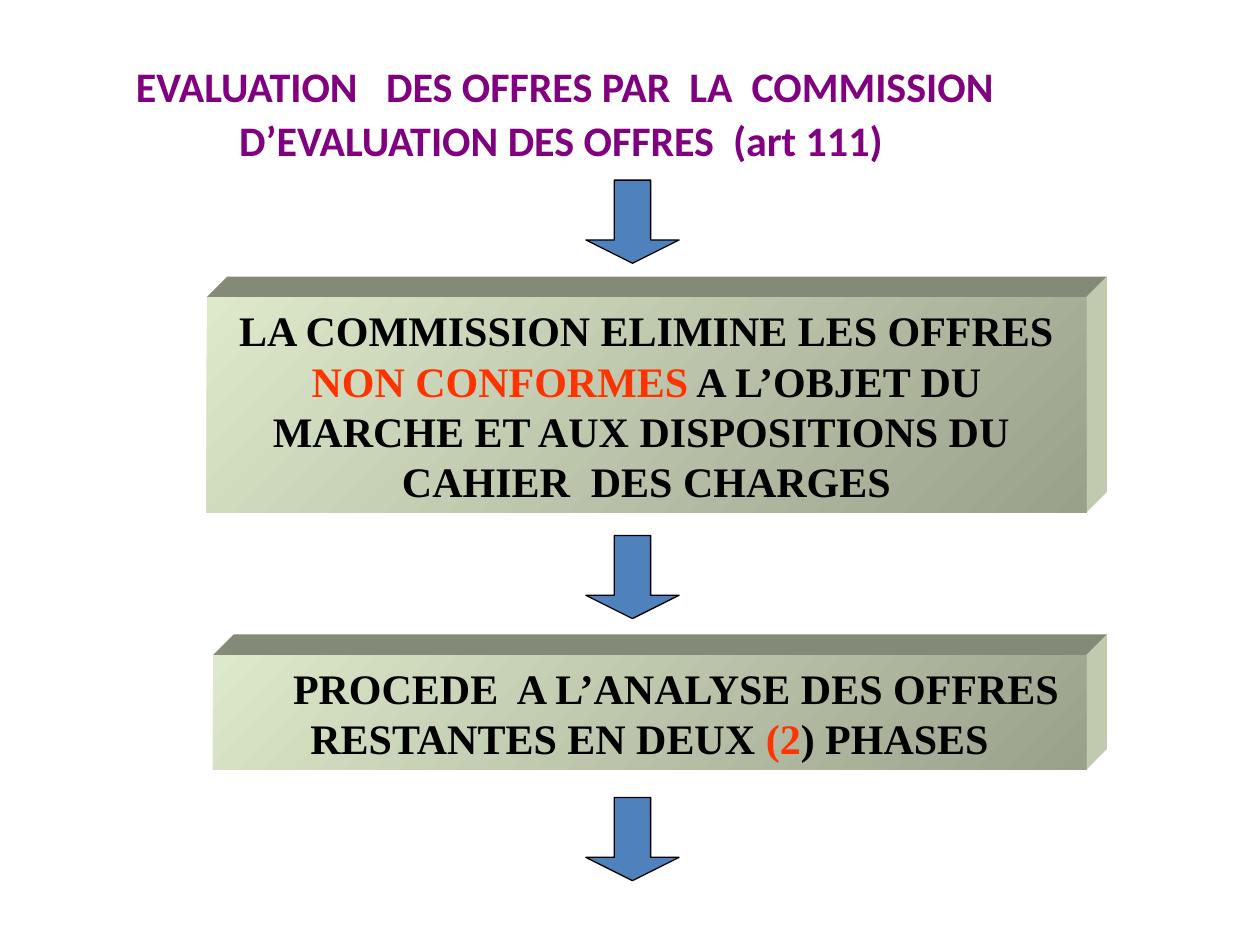
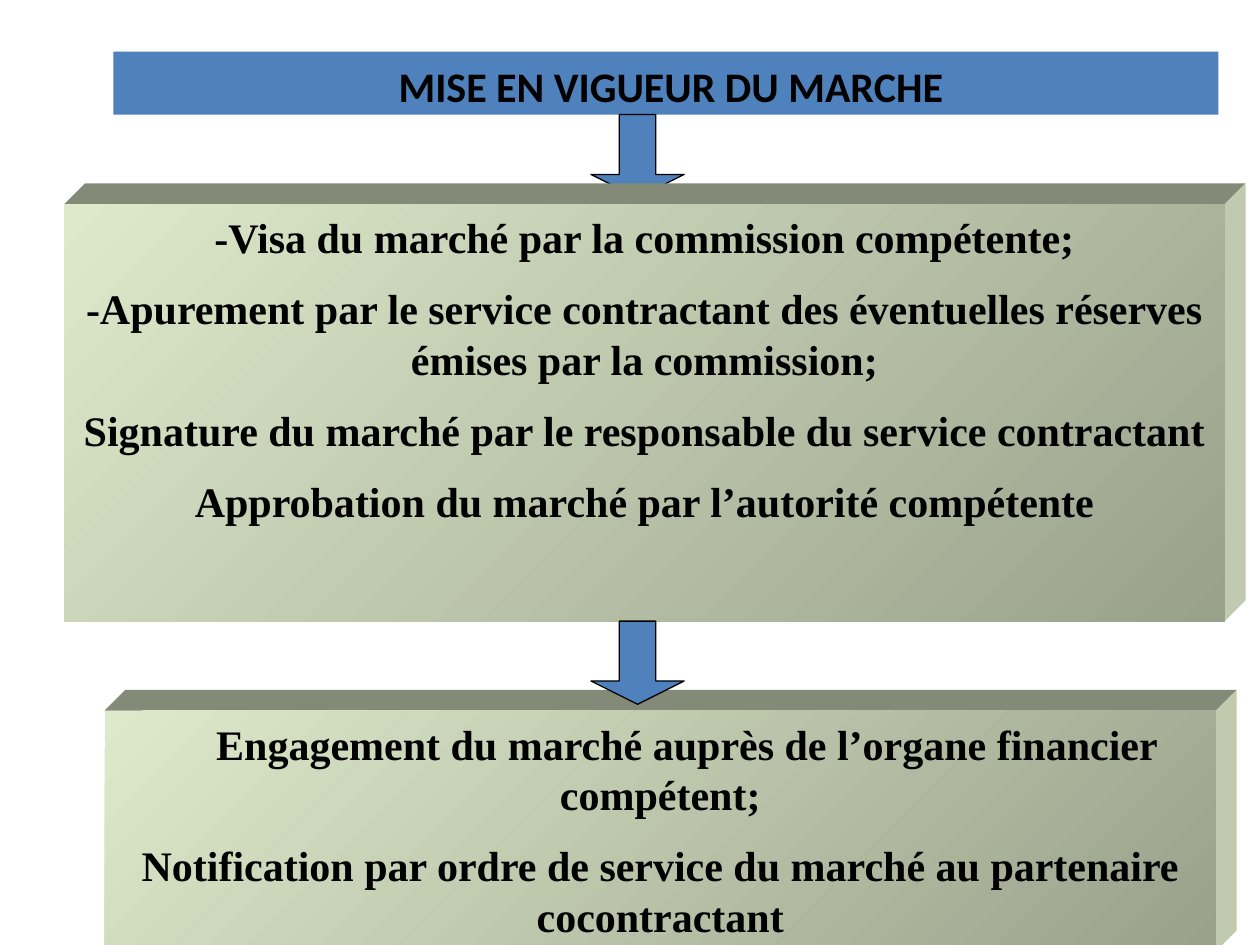
from typing import NamedTuple

from pptx import Presentation
from pptx.dml.color import RGBColor
from pptx.enum.shapes import MSO_SHAPE as Preset
from pptx.enum.text import MSO_ANCHOR as Anchor, PP_ALIGN as Align
from pptx.util import Inches, Pt

BLACK = RGBColor(0x00, 0x00, 0x00)
BLUE = RGBColor(0x4F, 0x81, 0xBD)
PURPLE = RGBColor(0x80, 0x00, 0x80)
RED = RGBColor(0xFF, 0x33, 0x00)
LIGHT = RGBColor(0xDE, 0xE8, 0xCA)
DARK = RGBColor(0x99, 0xA1, 0x8B)
ROOF = RGBColor(0x83, 0x8A, 0x78)
SIDE = RGBColor(0xC1, 0xC9, 0xAF)
DEPTH = 0.165
SERIF = "Times New Roman"
SANS = "Calibri"


class Run(NamedTuple):
    text: str
    color: RGBColor = BLACK


class Para(NamedTuple):
    runs: list[Run]
    indent: float = 0


class Arrow(NamedTuple):
    left: float
    top: float


class Block(NamedTuple):
    left: float
    top: float
    width: float
    height: float
    paras: list[Para]


class Title(NamedTuple):
    height: float
    paras: list[Para]
    band: bool = False


def write(frame, paras: list[Para], font: str, align, gap: float, inset: float):
    frame.word_wrap = True
    frame.vertical_anchor = Anchor.TOP
    frame.margin_top = Inches(inset)
    for i, item in enumerate(paras):
        para = frame.add_paragraph() if i else frame.paragraphs[0]
        para.alignment = align
        if i:
            para.space_before = Pt(gap)
        if item.indent:
            para._p.get_or_add_pPr().set("indent", str(Inches(item.indent)))
        para.font.name = font
        para.font.size = Pt(24)
        para.font.bold = True
        for part in item.runs:
            run = para.add_run()
            run.text = part.text
            run.font.color.rgb = part.color


def paint(shape, color: RGBColor):
    shape.shadow.inherit = False
    shape.fill.solid()
    shape.fill.fore_color.rgb = color
    shape.line.fill.background()


def draw_title(slide, title: Title):
    spot = [Inches(n) for n in (0.9, 0.41, 8.77, title.height)]
    if title.band:
        shape = slide.shapes.add_shape(Preset.RECTANGLE, *spot)
        paint(shape, BLUE)
    else:
        shape = slide.shapes.add_textbox(*spot)
    align = Align.CENTER if title.band else Align.LEFT
    write(shape.text_frame, title.paras, SANS, align, 2, 0.07)


def draw_arrow(slide, arrow: Arrow):
    shape = slide.shapes.add_shape(
        Preset.DOWN_ARROW, Inches(arrow.left), Inches(arrow.top), Inches(0.74), Inches(0.66)
    )
    paint(shape, BLUE)
    shape.adjustments[0] = 0.39
    shape.adjustments[1] = 0.28
    shape.line.color.rgb = BLACK
    shape.line.width = Pt(0.75)


def draw_face(slide, points: list[tuple[float, float]], color: RGBColor):
    spots = [(Inches(x), Inches(y)) for x, y in points]
    pen = slide.shapes.build_freeform(*spots[0])
    pen.add_line_segments(spots[1:], close=True)
    paint(pen.convert_to_shape(), color)


def draw_block(slide, block: Block):
    left, top, width, height, paras = block
    right, base = left + width, top + height
    peak, edge = top - DEPTH, right + DEPTH
    draw_face(slide, [(left, top), (left + DEPTH, peak), (edge, peak), (right, top)], ROOF)
    draw_face(slide, [(right, top), (edge, peak), (edge, base - DEPTH), (right, base)], SIDE)
    shape = slide.shapes.add_shape(
        Preset.RECTANGLE, Inches(left), Inches(top), Inches(width), Inches(height)
    )
    paint(shape, LIGHT)
    shape.fill.gradient()
    shape.fill.gradient_angle = 315
    for stop, color in zip(shape.fill.gradient_stops, (LIGHT, DARK)):
        stop.color.rgb = color
    write(shape.text_frame, paras, SERIF, Align.CENTER, 12, 0.06)
    for para in shape.text_frame.paragraphs:
        para.line_spacing = Pt(28.75)


DRAW = {Title: draw_title, Arrow: draw_arrow, Block: draw_block}

REVIEW = [
    Title(0.94, [
        Para([Run("EVALUATION   DES OFFRES PAR  LA  COMMISSION", PURPLE)], 0.08),
        Para([Run("D’EVALUATION DES OFFRES  (art 111)", PURPLE)], 0.9),
    ]),
    Arrow(4.65, 1.43),
    Block(1.64, 2.36, 6.98, 1.71, [Para([
        Run("LA COMMISSION ELIMINE LES OFFRES "),
        Run("NON CONFORMES", RED),
        Run(" A L’OBJET DU MARCHE ET AUX DISPOSITIONS DU  CAHIER  DES CHARGES"),
    ])]),
    Block(1.69, 5.2, 6.93, 0.91, [Para([
        Run("PROCEDE  A L’ANALYSE DES OFFRES RESTANTES EN DEUX "),
        Run("(2", RED),
        Run(") PHASES"),
    ], 0.42)]),
    Arrow(4.65, 4.25),
    Arrow(4.65, 6.33),
]

LAUNCH = [
    Title(0.5, [Para([Run("MISE EN VIGUEUR DU MARCHE")], 0.08)], True),
    Arrow(4.69, 0.91),
    Block(0.51, 1.62, 9.21, 3.31, [
        Para([Run("-Visa du marché par la commission compétente;")]),
        Para([Run("-Apurement par le service contractant des éventuelles réserves "
                  "émises par la commission;")]),
        Para([Run("Signature du marché par le responsable du service contractant")]),
        Para([Run("Approbation du marché par l’autorité compétente")]),
    ]),
    Block(0.83, 5.64, 8.82, 1.91, [
        Para([Run("Engagement du marché auprès de l’organe financier compétent;")], 0.42),
        Para([Run("Notification par ordre de service du marché au partenaire cocontractant")]),
    ]),
    Arrow(4.69, 4.93),
]


def main():
    deck = Presentation()
    deck.slide_width = Inches(10)
    deck.slide_height = Inches(7.5)
    for items in (REVIEW, LAUNCH):
        slide = deck.slides.add_slide(deck.slide_layouts[6])
        for item in items:
            DRAW[type(item)](slide, item)
    deck.save("out.pptx")


if __name__ == "__main__":
    main()
